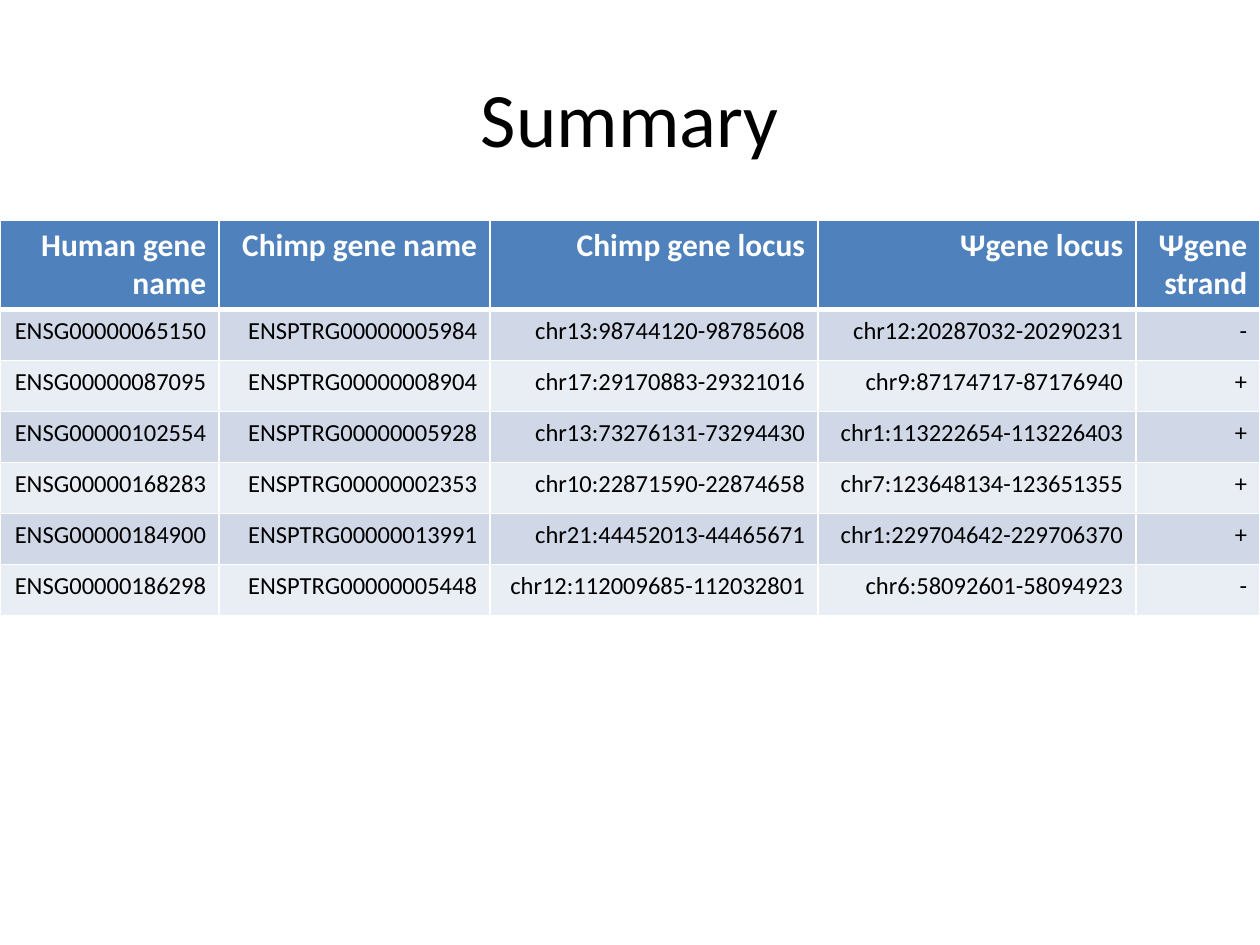
from lxml.etree import SubElement
from pptx import Presentation
from pptx.dml.color import RGBColor
from pptx.enum.text import MSO_ANCHOR, PP_ALIGN
from pptx.oxml.ns import qn
from pptx.util import Pt

PX = 914400 // 126
FONT = "Calibri"
COLORS = {
    "text": "000000",
    "white": "FFFFFF",
    "header": "4F81BD",
    "odd": "D0D8E8",
    "even": "E9EDF4",
}
COLUMN_WIDTHS = [219, 271, 328, 318, 124]
ROW_HEIGHT = 51
ROWS = [
    ["Human gene name", "Chimp gene name", "Chimp gene locus", "Ψgene locus", "Ψgene strand"],
    ["ENSG00000065150", "ENSPTRG00000005984", "chr13:98744120-98785608", "chr12:20287032-20290231", "-"],
    ["ENSG00000087095", "ENSPTRG00000008904", "chr17:29170883-29321016", "chr9:87174717-87176940", "+"],
    ["ENSG00000102554", "ENSPTRG00000005928", "chr13:73276131-73294430", "chr1:113222654-113226403", "+"],
    ["ENSG00000168283", "ENSPTRG00000002353", "chr10:22871590-22874658", "chr7:123648134-123651355", "+"],
    ["ENSG00000184900", "ENSPTRG00000013991", "chr21:44452013-44465671", "chr1:229704642-229706370", "+"],
    ["ENSG00000186298", "ENSPTRG00000005448", "chr12:112009685-112032801", "chr6:58092601-58094923", "-"],
]


def add_text(frame, text, size, color, align, bold=False):
    para = frame.paragraphs[0]
    para.alignment = align
    span = para.add_run()
    span.text = text
    span.font.name = FONT
    span.font.size = Pt(size)
    span.font.bold = bold
    span.font.color.rgb = RGBColor.from_string(COLORS[color])


def set_borders(cell, widths):
    properties = cell._tc.get_or_add_tcPr()
    for position, (side, width) in enumerate(widths.items()):
        line = SubElement(properties, qn(f"a:ln{side}"), w=str(Pt(width)))
        fill = SubElement(line, qn("a:solidFill"))
        SubElement(fill, qn("a:srgbClr"), val=COLORS["white"])
        properties.insert(position, line)


deck = Presentation()
deck.slide_width, deck.slide_height = 1260 * PX, 945 * PX
page = deck.slides.add_slide(deck.slide_layouts[5])

# Title
title = page.shapes.title
title.left, title.top, title.width, title.height = 63 * PX, 38 * PX, 1134 * PX, 157 * PX
title.text_frame.vertical_anchor = MSO_ANCHOR.MIDDLE
add_text(title.text_frame, "Summary", 44, "text", PP_ALIGN.CENTER)

# Gene table
table_height = 394 * PX
table_frame = page.shapes.add_table(
    len(ROWS), len(COLUMN_WIDTHS), 0, 220 * PX, sum(COLUMN_WIDTHS) * PX, table_height
)
table = table_frame.table
for column, width in zip(table.columns, COLUMN_WIDTHS):
    column.width = width * PX
for row in table.rows:
    row.height = ROW_HEIGHT * PX
table_frame.height = table_height  # the header row grows to two lines

for row_index, row in enumerate(ROWS):
    is_header = row_index == 0
    band = "header" if is_header else "odd" if row_index % 2 else "even"
    borders = {"L": 1, "R": 1, "T": 3 if row_index == 1 else 1, "B": 3 if is_header else 1}
    for column_index, text in enumerate(row):
        cell = table.cell(row_index, column_index)
        cell.fill.solid()
        cell.fill.fore_color.rgb = RGBColor.from_string(COLORS[band])
        set_borders(cell, borders)
        add_text(
            cell.text_frame, text, 18 if is_header else 14,
            "white" if is_header else "text", PP_ALIGN.RIGHT, is_header,
        )

deck.save("out.pptx")
